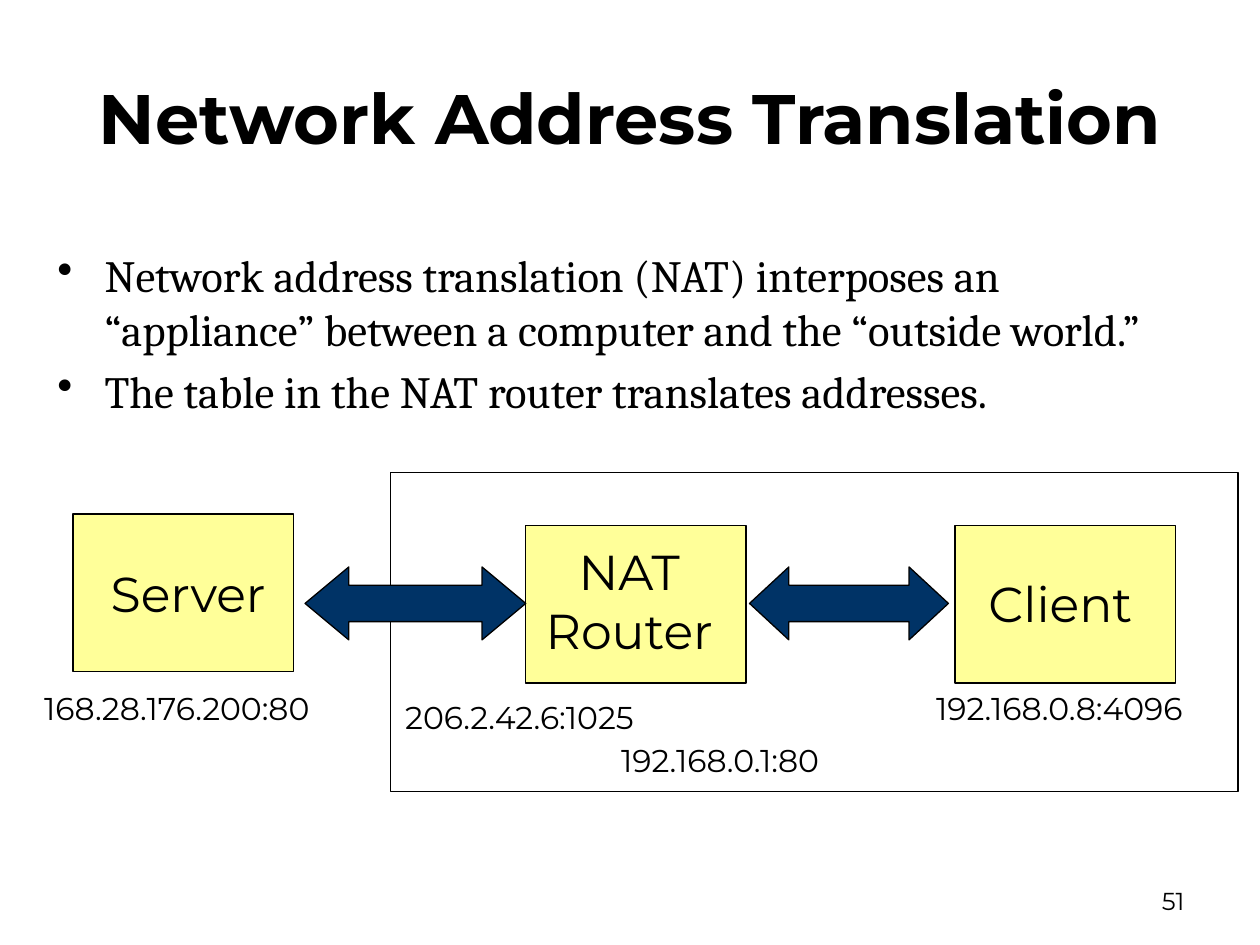
import pptx
import pptx.dml.color
import pptx.enum.shapes
import pptx.enum.text
import pptx.oxml
import pptx.oxml.ns
import pptx.util

Cm = pptx.util.Cm
Pt = pptx.util.Pt
ALIGN = pptx.enum.text.PP_ALIGN
ANCHOR = pptx.enum.text.MSO_ANCHOR
SHAPE = pptx.enum.shapes.MSO_SHAPE

BLACK = pptx.dml.color.RGBColor(0x00, 0x00, 0x00)
YELLOW = pptx.dml.color.RGBColor(0xFF, 0xFF, 0x99)
NAVY = pptx.dml.color.RGBColor(0x00, 0x33, 0x66)
HEADING_FONT = "Montserrat"
BODY_FONT = "Cambria"

NODE_WIDTH, NODE_HEIGHT = 4.45, 3.18
ARROW_TOP, ARROW_HEIGHT = 11.43, 1.47
LABEL_WIDTH = 4.65
LINE_HEIGHT = 1.02


def add_bullet(paragraph, indent):
    properties = paragraph._p.get_or_add_pPr()
    properties.set("marL", str(Cm(indent)))
    properties.set("indent", str(-Cm(indent)))
    bullet = pptx.oxml.parse_xml(
        f'<a:buChar {pptx.oxml.ns.nsdecls("a")} char="•"/>')
    properties.append(bullet)


def write_text(shape, paragraphs, size, font=HEADING_FONT, bold=False,
               align=ALIGN.LEFT, anchor=ANCHOR.TOP, space_before=0,
               bullet_indent=None):
    frame = shape.text_frame
    frame.word_wrap = True
    frame.auto_size = pptx.enum.text.MSO_AUTO_SIZE.NONE
    frame.vertical_anchor = anchor
    for index, text in enumerate(paragraphs):
        paragraph = frame.add_paragraph() if index else frame.paragraphs[0]
        paragraph.text = text
        paragraph.alignment = align
        paragraph.space_before = Pt(space_before if index else 0)
        if bullet_indent:
            add_bullet(paragraph, bullet_indent)
        for run in paragraph.runs:
            run.font.name = font
            run.font.size = Pt(size)
            run.font.bold = bold
            run.font.color.rgb = BLACK


def add_text(slide, left, top, width, height, paragraphs, **text_format):
    box = slide.shapes.add_textbox(Cm(left), Cm(top), Cm(width), Cm(height))
    write_text(box, paragraphs, **text_format)


def add_outlined_shape(slide, kind, left, top, width, height, fill=None):
    shape = slide.shapes.add_shape(
        kind, Cm(left), Cm(top), Cm(width), Cm(height))
    shape.shadow.inherit = False
    if fill is None:
        shape.fill.background()
    else:
        shape.fill.solid()
        shape.fill.fore_color.rgb = fill
    shape.line.color.rgb = BLACK
    shape.line.width = Pt(0.75)
    return shape


def add_title(slide, text):
    title = slide.shapes.title
    title.left, title.top = Cm(1.27), Cm(0.76)
    title.width, title.height = Cm(22.86), Cm(3.18)
    write_text(title, [text], size=40, bold=True, align=ALIGN.CENTER,
               anchor=ANCHOR.MIDDLE)


def add_network_diagram(slide):
    for left, top in [(1.47, 10.36), (10.59, 10.59), (19.25, 10.59)]:
        add_outlined_shape(slide, SHAPE.RECTANGLE, left, top,
                           NODE_WIDTH, NODE_HEIGHT, YELLOW)

    # The frame marks the private network behind the router.
    add_outlined_shape(slide, SHAPE.RECTANGLE, 7.87, 9.53, 17.09, 6.43)

    for left, width, head in [(6.15, 4.45, 0.6), (15.11, 4.01, 0.54)]:
        arrow = add_outlined_shape(slide, SHAPE.LEFT_RIGHT_ARROW, left,
                                   ARROW_TOP, width, ARROW_HEIGHT, NAVY)
        arrow.adjustments[0] = 0.5
        arrow.adjustments[1] = head

    for name, left, top, height in [("Server", 1.47, 11.23, 1.45),
                                    ("NAT\nRouter", 10.36, 10.8, 2.62),
                                    ("Client", 19.05, 11.43, 1.45)]:
        add_text(slide, left, top, LABEL_WIDTH, height, [name], size=28,
                 align=ALIGN.CENTER)

    for address, left, top, width in [("168.28.176.200:80", 0.64, 13.77, 6.55),
                                      ("206.2.42.6:1025", 7.92, 13.94, 5.72),
                                      ("192.168.0.1:80", 12.27, 14.81, 5.72),
                                      ("192.168.0.8:4096", 18.62, 13.77, 5.92)]:
        add_text(slide, left, top, width, LINE_HEIGHT, [address], size=18)


def main():
    presentation = pptx.Presentation()
    presentation.slide_width = Cm(25.4)
    presentation.slide_height = Cm(19.05)
    slide = presentation.slides.add_slide(presentation.slide_layouts[5])

    add_title(slide, "Network Address Translation")
    add_text(slide, 0.91, 4.88, 23.57, 4.01, [
        "Network address translation (NAT) interposes an “appliance” "
        "between a computer and the “outside world.”",
        "The table in the NAT router translates addresses.",
    ], size=25.5, font=BODY_FONT, space_before=5, bullet_indent=0.95)
    add_network_diagram(slide)
    add_text(slide, 18.21, 17.65, 5.92, LINE_HEIGHT, ["51"], size=14,
             align=ALIGN.RIGHT, anchor=ANCHOR.MIDDLE)

    presentation.save("out.pptx")


if __name__ == "__main__":
    main()
